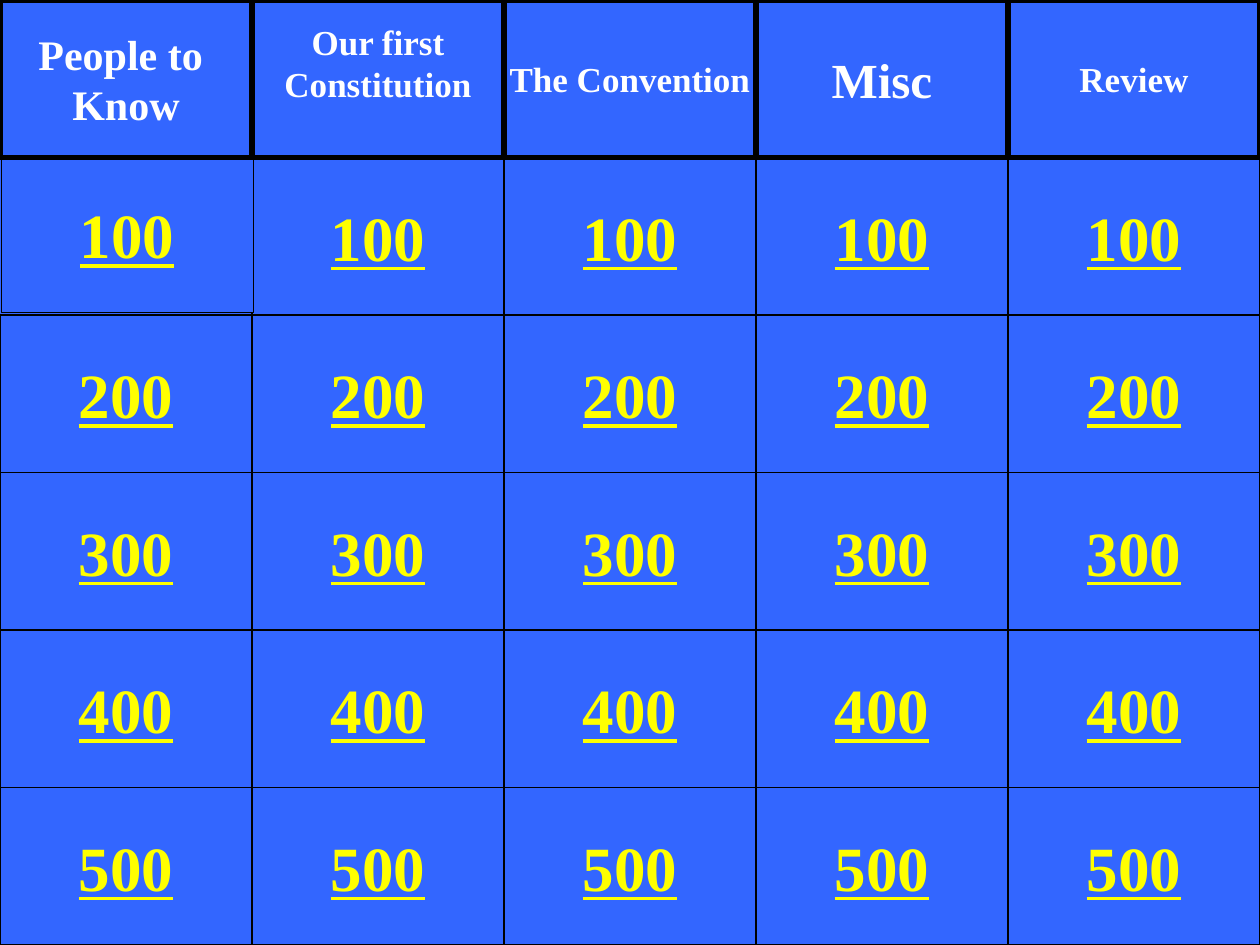
"""Build a quiz board with five categories and five point values each."""
import pptx
import pptx.dml.color
import pptx.enum.shapes
import pptx.enum.text
import pptx.util

Inches = pptx.util.Inches
Shape = pptx.enum.shapes.MSO_SHAPE
BLUE = pptx.dml.color.RGBColor(0x33, 0x66, 0xFF)
BLACK = pptx.dml.color.RGBColor(0, 0, 0)
YELLOW = pptx.dml.color.RGBColor(0xFF, 0xFF, 0)
WHITE = pptx.dml.color.RGBColor(0xFF, 0xFF, 0xFF)
CELL_WIDTH, CELL_HEIGHT = 2, 1.25

deck = pptx.Presentation()
deck.slide_width, deck.slide_height = Inches(10), Inches(7.5)
page = deck.slides.add_slide(deck.slide_layouts[6])
page.background.fill.solid()
page.background.fill.fore_color.rgb = BLUE


def add_cell(kind, left, top, lines, size, color, border, underline=None):
    box = page.shapes.add_shape(
        kind, Inches(left), Inches(top), Inches(CELL_WIDTH), Inches(CELL_HEIGHT))
    box.shadow.inherit = False
    box.fill.solid()
    box.fill.fore_color.rgb = BLUE
    box.line.color.rgb = BLACK
    box.line.width = pptx.util.Pt(border)
    frame = box.text_frame
    frame.word_wrap = False
    frame.vertical_anchor = pptx.enum.text.MSO_ANCHOR.MIDDLE
    for index, line in enumerate(lines):
        para = frame.add_paragraph() if index else frame.paragraphs[0]
        para.text = line
        para.alignment = pptx.enum.text.PP_ALIGN.CENTER
        para.font.name = "Times New Roman"
        para.font.size = pptx.util.Pt(size)
        para.font.bold = True
        para.font.underline = underline
        para.font.color.rgb = color
    return box


buttons = [(column * CELL_WIDTH, row * CELL_HEIGHT, row * 100)
           for column in range(5) for row in range(1, 6)]
first_button = (0.01, 1.23, 100)
for left, top, points in buttons[1:] + [first_button]:
    add_cell(Shape.ACTION_BUTTON_CUSTOM, left, top, [str(points)], 36, YELLOW, 0.75, True)

categories = [
    (["People to ", "Know"], 24, 0.05),
    (["Our first", "Constitution"], 20, 0.31),
    (["The Convention"], 20, 0.05),
    (["Misc"], 28, 0.05),
    (["Review"], 20, 0.05),
]
for column, (lines, size, bottom_margin) in enumerate(categories):
    header = add_cell(Shape.RECTANGLE, column * CELL_WIDTH, 0, lines, size, WHITE, 3)
    header.text_frame.margin_bottom = Inches(bottom_margin)

deck.save("out.pptx")
